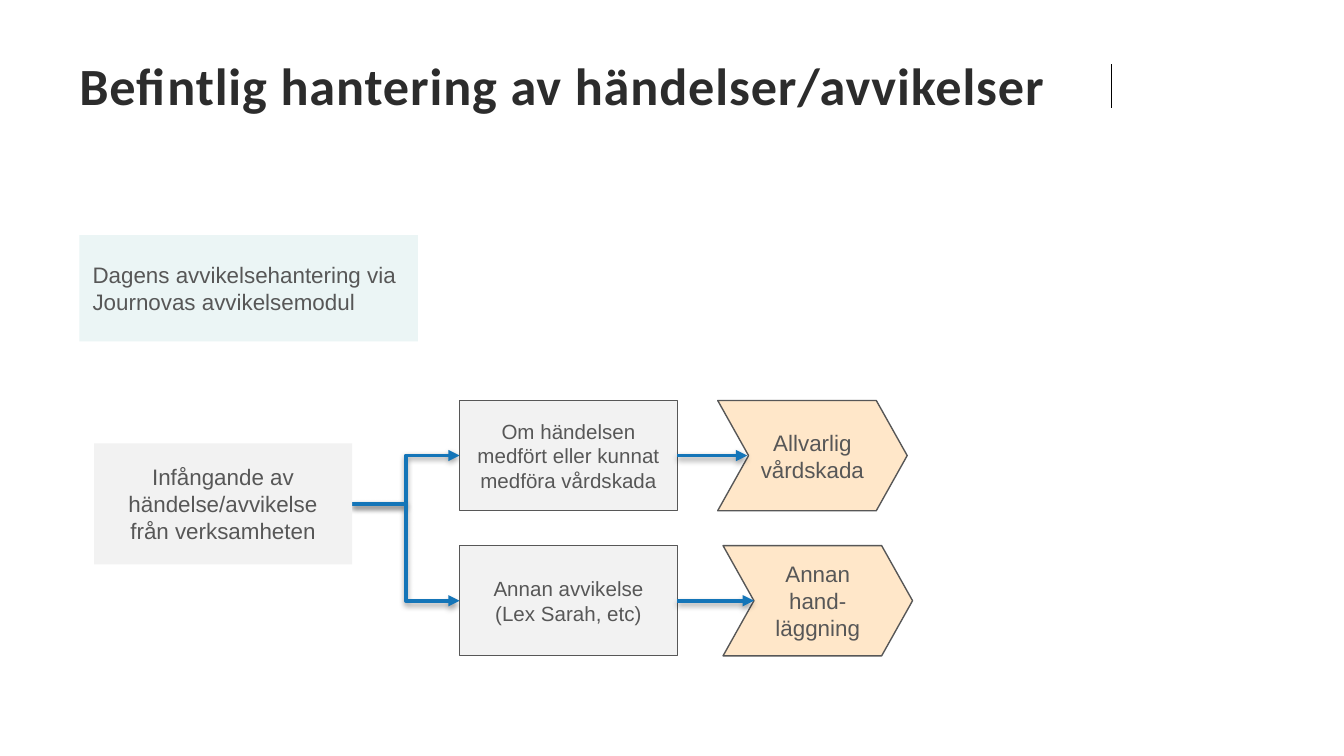
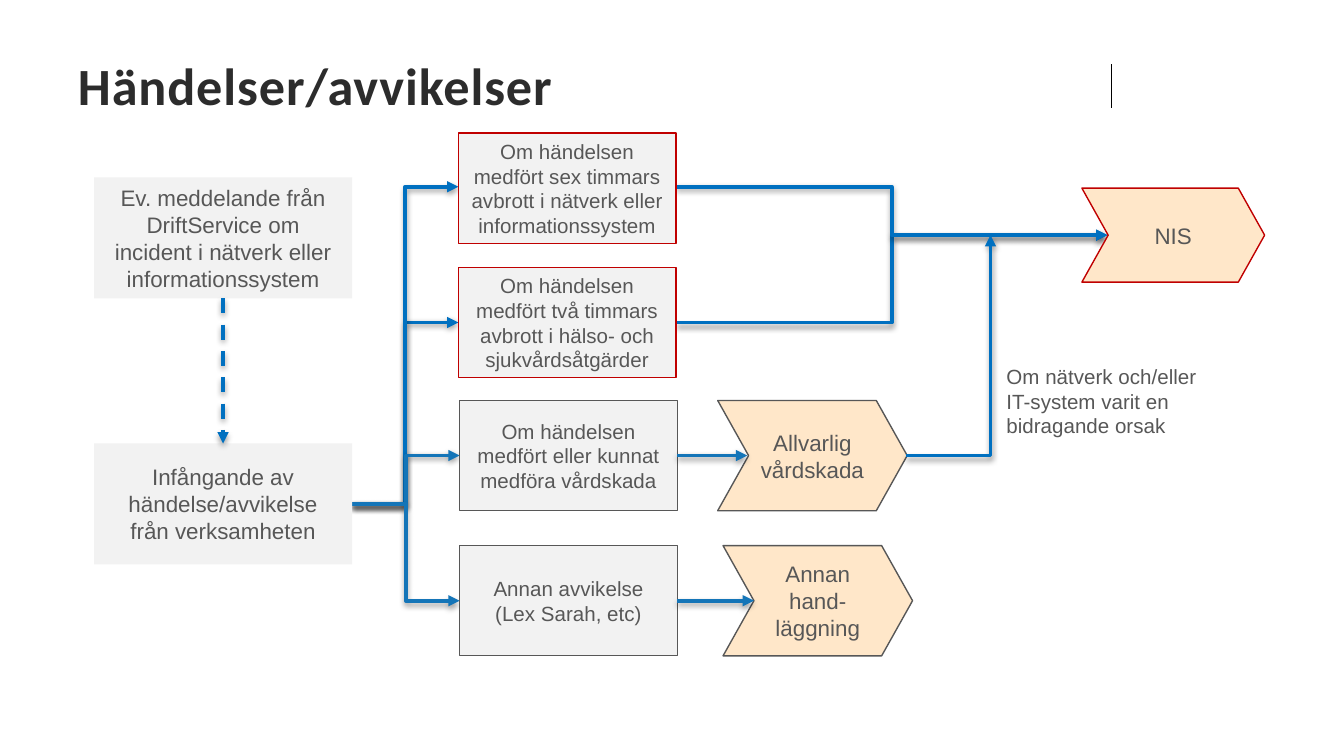
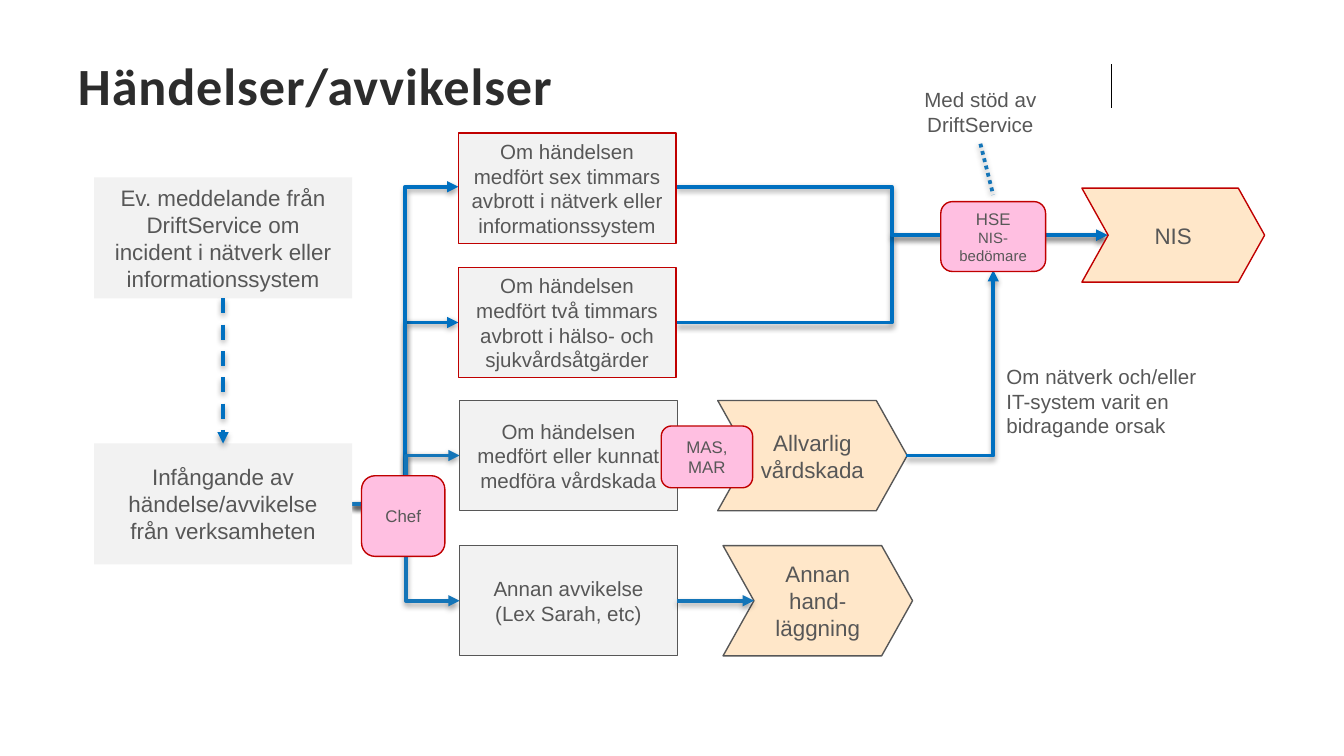
from dataclasses import dataclass, replace

from lxml import etree
from pptx import Presentation
from pptx import util as u
from pptx.dml.color import RGBColor
from pptx.enum import dml, shapes, text
from pptx.oxml import parse_xml
from pptx.oxml.ns import nsdecls, qn

GREY_TEXT, TITLE_TEXT, BLACK = "575757", "2C2C2C", "000000"
GREY_FILL, TEAL_FILL, ORANGE_FILL, PINK_FILL = "F2F2F2", "EBF5F5", "FFE7C9", "FFBFE1"
RED, BLUE, BRIGHT_BLUE = "C00000", "1475B8", "0070C0"

RECT = shapes.MSO_SHAPE.RECTANGLE
CHEVRON = shapes.MSO_SHAPE.CHEVRON
ROUNDED = shapes.MSO_SHAPE.ROUNDED_RECTANGLE
STRAIGHT, ELBOW = shapes.MSO_CONNECTOR.STRAIGHT, shapes.MSO_CONNECTOR.ELBOW
LEFT, CENTER = text.PP_ALIGN.LEFT, text.PP_ALIGN.CENTER
TOP_SIDE, BOTTOM_SIDE, RIGHT_SIDE = 0, 2, 3

Point = tuple[float, float]


@dataclass(frozen=True)
class Box:
    label: str
    left: float
    top: float
    width: float
    height: float
    fill: str = GREY_FILL
    outline: str | None = None
    size: float = 12
    form: int = RECT
    align: int = CENTER
    detail: str = ""


@dataclass(frozen=True)
class Link:
    start: Point
    end: Point
    color: str = BRIGHT_BLUE
    kind: int = ELBOW
    dash: int | None = None
    arrow: bool = True
    one_corner: bool = False


def step(label: str, left: float, top: float, outline: str) -> Box:
    return Box(label, left, top, 1.62, 0.82, outline=outline, size=11)


def outcome(label: str, left: float, top: float) -> Box:
    return Box(label, left, top, 1.41, 0.82, ORANGE_FILL, GREY_TEXT, form=CHEVRON)


def role(label: str, left: float, top: float, width: float, height: float,
         detail: str = "") -> Box:
    return Box(label, left, top, width, height, PINK_FILL, RED, 9, ROUNDED, detail=detail)


CURRENT_SYSTEM = Box("Dagens avvikelsehantering via Journovas avvikelsemodul",
                     0.59, 1.75, 2.52, 0.79, TEAL_FILL, align=LEFT)
CAPTURE = Box("Infångande av händelse/avvikelse från verksamheten", 0.7, 3.3, 1.92, 0.9)
MESSAGE = replace(CAPTURE, top=1.32, label="Ev. meddelande från DriftService om "
                  "incident i nätverk eller informationssystem")
CARE_INJURY = step("Om händelsen medfört eller kunnat medföra vårdskada", 3.42, 2.98, GREY_TEXT)
OTHER_DEVIATION = step("Annan avvikelse\n(Lex Sarah, etc)", 3.42, 4.06, GREY_TEXT)
SIX_HOURS = step("Om händelsen medfört sex timmars avbrott i nätverk eller "
                 "informationssystem", 3.41, 0.99, RED)
TWO_HOURS = step("Om händelsen medfört två timmars avbrott i hälso- och "
                 "sjukvårdsåtgärder", 3.41, 1.99, RED)
SERIOUS_INJURY = outcome("Allvarlig vårdskada", 5.34, 2.98)
OTHER_HANDLING = outcome("Annan hand-läggning", 5.38, 4.06)
NIS = Box("NIS", 8.05, 1.4, 1.36, 0.7, ORANGE_FILL, RED, form=CHEVRON)
ROLES = (
    role("Chef", 2.69, 3.54, 0.62, 0.6),
    role("MAS, MAR", 4.92, 3.17, 0.68, 0.46),
    role("HSE", 7, 1.5, 0.78, 0.52, detail="NIS-bedömare"),
)

CAPTURE_EXIT = (2.62, 3.75)
NIS_NOTCH = (8.24, 1.75)
INJURY_EXIT = (6.74, 3.39)
BASE_BRANCHES = tuple(Link(CAPTURE_EXIT, (3.42, y), BLUE) for y in (3.39, 4.47))
OUTAGE_BRANCHES = tuple(
    link for y in (2.4, 1.39)
    for link in (Link(CAPTURE_EXIT, (3.41, y)), Link((5.03, y), NIS_NOTCH)))


def rgb(color: str) -> RGBColor:
    return RGBColor.from_string(color)


def write(frame, content: str, *, size: float, color: str = GREY_TEXT, font: str = "Arial",
          bold: bool = False, align: int = LEFT, anchor: int = text.MSO_ANCHOR.MIDDLE,
          inset: float | None = None, line_points: float | None = None,
          tracking: float = 0, detail: str = "") -> None:
    """Fill the frame, one paragraph a line; detail follows a line break, one point smaller."""
    frame.word_wrap = True
    frame.vertical_anchor = anchor
    if inset is not None:
        frame.margin_left = frame.margin_right = u.Inches(inset)
        frame.margin_top = frame.margin_bottom = u.Inches(inset)
    for index, line in enumerate(content.split("\n")):
        paragraph = frame.add_paragraph() if index else frame.paragraphs[0]
        paragraph.alignment = align
        if line_points:
            paragraph.line_spacing = u.Pt(line_points)
        parts = [(line, size)]
        if detail:
            parts.append((detail, size - 1))
        for number, (words, points) in enumerate(parts):
            if number:
                paragraph.add_line_break()
            run = paragraph.add_run()
            run.text = words
            run.font.name, run.font.size, run.font.bold = font, u.Pt(points), bold
            run.font.color.rgb = rgb(color)
            if tracking:
                run.font._element.set("spc", str(round(tracking * 100)))


def draw_box(slide, box: Box):
    shape = slide.shapes.add_shape(box.form, u.Inches(box.left), u.Inches(box.top),
                                   u.Inches(box.width), u.Inches(box.height))
    shape.shadow.inherit = False
    shape.fill.solid()
    shape.fill.fore_color.rgb = rgb(box.fill)
    if box.outline:
        shape.line.color.rgb = rgb(box.outline)
        shape.line.width = u.Pt(0.75)
    else:
        shape.line.fill.background()
    if box.form == CHEVRON:
        shape.adjustments[0] = 0.28
    write(shape.text_frame, box.label, size=box.size, align=box.align,
          inset=0.04 if box.form == CHEVRON else None, detail=box.detail)
    return shape


def add_line(slide, start: Point, end: Point, color: str, width: float, kind: int = STRAIGHT):
    line = slide.shapes.add_connector(kind, *map(u.Inches, start + end))
    line.line.color.rgb = rgb(color)
    line.line.width = u.Pt(width)
    etree.SubElement(line._element.spPr, qn("a:effectLst"))
    return line


def draw_link(slide, link: Link):
    """Draw a flow line with a soft shadow and, unless switched off, an arrowhead."""
    line = add_line(slide, link.start, link.end, link.color, 2, link.kind)
    if link.dash:
        line.line.dash_style = link.dash
    properties = line._element.spPr
    if link.arrow:
        etree.SubElement(properties.find(qn("a:ln")), qn("a:tailEnd"), type="triangle")
    if link.one_corner:
        properties.find(qn("a:prstGeom")).set("prst", "bentConnector2")
    properties.find(qn("a:effectLst")).append(parse_xml(
        f'<a:outerShdw {nsdecls("a")} blurRad="40000" dist="20000" dir="5400000" '
        'rotWithShape="0"><a:srgbClr val="000000"><a:alpha val="38000"/></a:srgbClr>'
        '</a:outerShdw>'))
    return line


def draw_note(slide, words: str, left: float, top: float, width: float, height: float,
              align: int = LEFT):
    note = slide.shapes.add_textbox(*map(u.Inches, (left, top, width, height)))
    write(note.text_frame, words, size=11, align=align, anchor=text.MSO_ANCHOR.TOP)
    note.text_frame.auto_size = text.MSO_AUTO_SIZE.SHAPE_TO_FIT_TEXT
    return note


def new_slide(deck, title: str, left: float, width: float):
    slide = deck.slides.add_slide(deck.slide_layouts[6])
    add_line(slide, (8.27, 0.48), (8.27, 0.8), BLACK, 1)
    heading = slide.shapes.add_textbox(*map(u.Inches, (left, 0.39, width, 0.57)))
    write(heading.text_frame, title, size=28, color=TITLE_TEXT, font="Calibri", bold=True,
          inset=0, line_points=27, tracking=0.5)
    return slide


def draw_base_flow(slide):
    """Draw the flow that every slide has and return its first box."""
    for branch in BASE_BRANCHES:
        draw_link(slide, branch)
    capture = draw_box(slide, CAPTURE)
    for cause, result, notch in ((CARE_INJURY, SERIOUS_INJURY, (5.56, 3.39)),
                                 (OTHER_DEVIATION, OTHER_HANDLING, (5.61, 4.47))):
        cause_box = draw_box(slide, cause)
        draw_box(slide, result)
        arrow = draw_link(slide, Link((5.04, notch[1]), notch, BLUE, STRAIGHT))
        arrow.begin_connect(cause_box, RIGHT_SIDE)
    return capture


def draw_nis_flow(slide, injury_target: Point) -> None:
    """Draw the whole flow; serious injuries lead on to the given point."""
    for branch in OUTAGE_BRANCHES:
        draw_link(slide, branch)
    capture = draw_base_flow(slide)
    message = draw_box(slide, MESSAGE)
    for box in (SIX_HOURS, TWO_HOURS, NIS):
        draw_box(slide, box)
    report = draw_link(slide, Link((1.66, 2.22), (1.66, 3.3), kind=STRAIGHT,
                                   dash=dml.MSO_LINE.DASH))
    report.begin_connect(message, BOTTOM_SIDE)
    report.end_connect(capture, TOP_SIDE)
    draw_link(slide, Link(INJURY_EXIT, injury_target, one_corner=True))
    draw_note(slide, "Om nätverk och/eller IT-system varit en bidragande orsak",
              7.39, 2.66, 1.62, 0.66)


def build_current(deck) -> None:
    slide = new_slide(deck, "Befintlig hantering av händelser/avvikelser", 0.59, 7.6)
    draw_base_flow(slide)
    draw_box(slide, CURRENT_SYSTEM)


def build_events(deck) -> None:
    slide = new_slide(deck, "Händelser/avvikelser", 0.58, 7.08)
    draw_nis_flow(slide, (7.37, 1.75))


def build_events_with_roles(deck) -> None:
    slide = new_slide(deck, "Händelser/avvikelser", 0.58, 7.08)
    draw_nis_flow(slide, (7.39, 2.01))
    for box in ROLES:
        draw_box(slide, box)
    support = draw_note(slide, "Med stöd av DriftService", 6.74, 0.6, 1.11, 0.47, CENTER)
    dotted = draw_link(slide, Link((7.29, 1.06), (7.39, 1.45), BLUE, STRAIGHT,
                                   dml.MSO_LINE.ROUND_DOT, arrow=False))
    dotted.begin_connect(support, BOTTOM_SIDE)


def main() -> None:
    deck = Presentation()
    deck.slide_width = u.Inches(10)
    deck.slide_height = deck.slide_width * 9 // 16
    build_current(deck)
    build_events(deck)
    build_events_with_roles(deck)
    deck.save("out.pptx")


if __name__ == "__main__":
    main()
